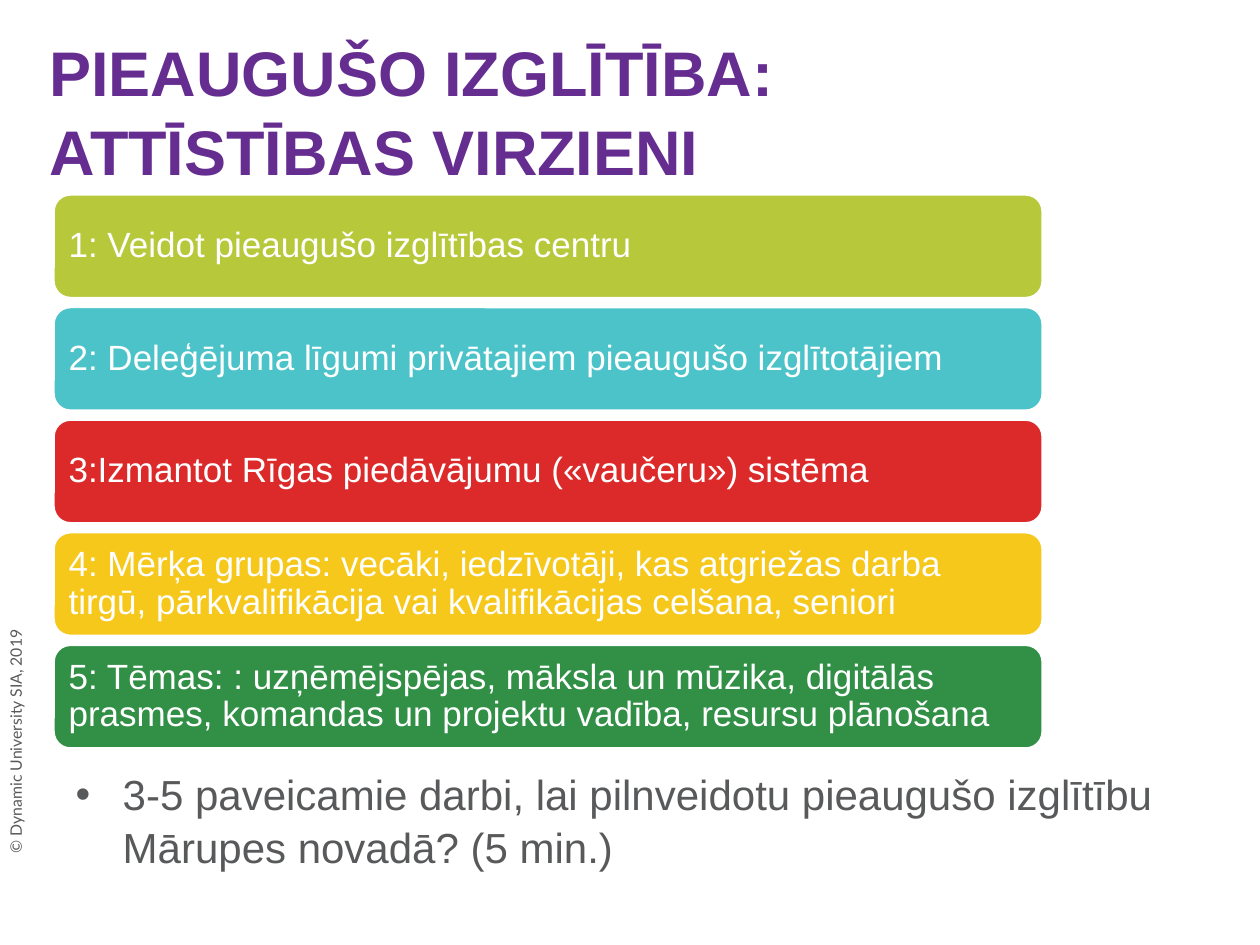
from dataclasses import dataclass

from lxml import etree
from pptx import Presentation
from pptx.dml.color import RGBColor
from pptx.enum import shapes, text
from pptx.oxml import ns
from pptx.util import Cm, Pt


@dataclass(frozen=True)
class Theme:
    font: str = "Arial"
    copyright_font: str = "Lato"
    purple: str = "662D91"
    grey: str = "58595B"
    white: str = "FFFFFF"
    title_size: int = 36
    task_size: int = 24
    direction_size: int = 20
    copyright_size: int = 9
    line_spacing: float = 1.05


THEME = Theme()

DIRECTIONS = [
    ("1: Veidot pieaugušo izglītības centru", "B7C93B"),
    ("2: Deleģējuma līgumi privātajiem pieaugušo izglītotājiem", "4BC3C9"),
    ("3:Izmantot Rīgas piedāvājumu («vaučeru») sistēma", "DC2A2B"),
    ("4: Mērķa grupas: vecāki, iedzīvotāji, kas atgriežas darba tirgū, "
     "pārkvalifikācija vai kvalifikācijas celšana, seniori", "F6C81C"),
    ("5: Tēmas: : uzņēmējspējas, māksla un mūzika, digitālās prasmes, "
     "komandas un projektu vadība, resursu plānošana", "318F46"),
]


def place(box, left, top, width, height):
    box.left, box.top = Cm(left), Cm(top)
    box.width, box.height = Cm(width), Cm(height)


def write(paragraph, words, size, color, font=THEME.font, bold=False, spacing=1.0):
    paragraph.alignment = text.PP_ALIGN.LEFT
    paragraph.line_spacing = spacing
    paragraph.space_before = Pt(0)
    run = paragraph.add_run()
    run.text = words
    run.font.name = font
    run.font.size = Pt(size)
    run.font.bold = bold
    run.font.color.rgb = RGBColor.from_string(color)


def add_copyright(slide):
    note = slide.shapes.add_textbox(Cm(-4.95), Cm(11.86), Cm(10.54), Cm(0.64))
    note.rotation = 270
    note.text_frame.word_wrap = True
    write(note.text_frame.paragraphs[0], "© Dynamic University SIA, 2019",
          THEME.copyright_size, THEME.grey, THEME.copyright_font)


def fill_title(title):
    place(title, 0.74, 0.61, 21.16, 3.18)
    frame = title.text_frame
    frame.auto_size = text.MSO_AUTO_SIZE.NONE
    frame.vertical_anchor = text.MSO_ANCHOR.MIDDLE
    write(frame.paragraphs[0], "PIEAUGUŠO IZGLĪTĪBA: ATTĪSTĪBAS VIRZIENI",
          THEME.title_size, THEME.purple, bold=True, spacing=THEME.line_spacing)


def add_direction(slide, top, words, color):
    bar = slide.shapes.add_shape(shapes.MSO_SHAPE.ROUNDED_RECTANGLE,
                                 Cm(1.07), Cm(top), Cm(19.96), Cm(2.11))
    bar.shadow.inherit = False
    bar.fill.solid()
    bar.fill.fore_color.rgb = RGBColor.from_string(color)
    bar.line.color.rgb = RGBColor.from_string(THEME.white)
    bar.line.width = Pt(2)
    frame = bar.text_frame
    frame.word_wrap = True
    frame.vertical_anchor = text.MSO_ANCHOR.MIDDLE
    frame.margin_left = frame.margin_right = Cm(0.21)
    frame.margin_top = frame.margin_bottom = Cm(0.21)
    write(frame.paragraphs[0], words, THEME.direction_size, THEME.white, spacing=0.9)


def add_bullet(paragraph, indent):
    properties = paragraph._p.get_or_add_pPr()
    properties.set("marL", str(indent))
    properties.set("indent", str(-indent))
    etree.SubElement(properties, ns.qn("a:buFont")).set("typeface", THEME.font)
    etree.SubElement(properties, ns.qn("a:buChar")).set("char", "•")


def fill_task(task):
    place(task, 1.27, 15.32, 22.78, 2.16)
    task.text_frame.auto_size = text.MSO_AUTO_SIZE.NONE
    paragraph = task.text_frame.paragraphs[0]
    add_bullet(paragraph, Cm(0.95))
    write(paragraph, "3-5 paveicamie darbi, lai pilnveidotu pieaugušo izglītību "
          "Mārupes novadā? (5 min.)",
          THEME.task_size, THEME.grey, spacing=THEME.line_spacing)


def main():
    deck = Presentation()
    deck.slide_width, deck.slide_height = Cm(25.4), Cm(19.05)
    slide = deck.slides.add_slide(deck.slide_layouts[1])

    # Title and the copyright line up the left edge
    fill_title(slide.shapes.title)
    add_copyright(slide)

    # Development directions, evenly stacked
    first_top, pitch = 3.91, 2.27
    for row, (words, color) in enumerate(DIRECTIONS):
        add_direction(slide, first_top + row * pitch, words, color)

    # Group task below the directions
    fill_task(slide.placeholders[1])

    deck.save("out.pptx")


if __name__ == "__main__":
    main()
